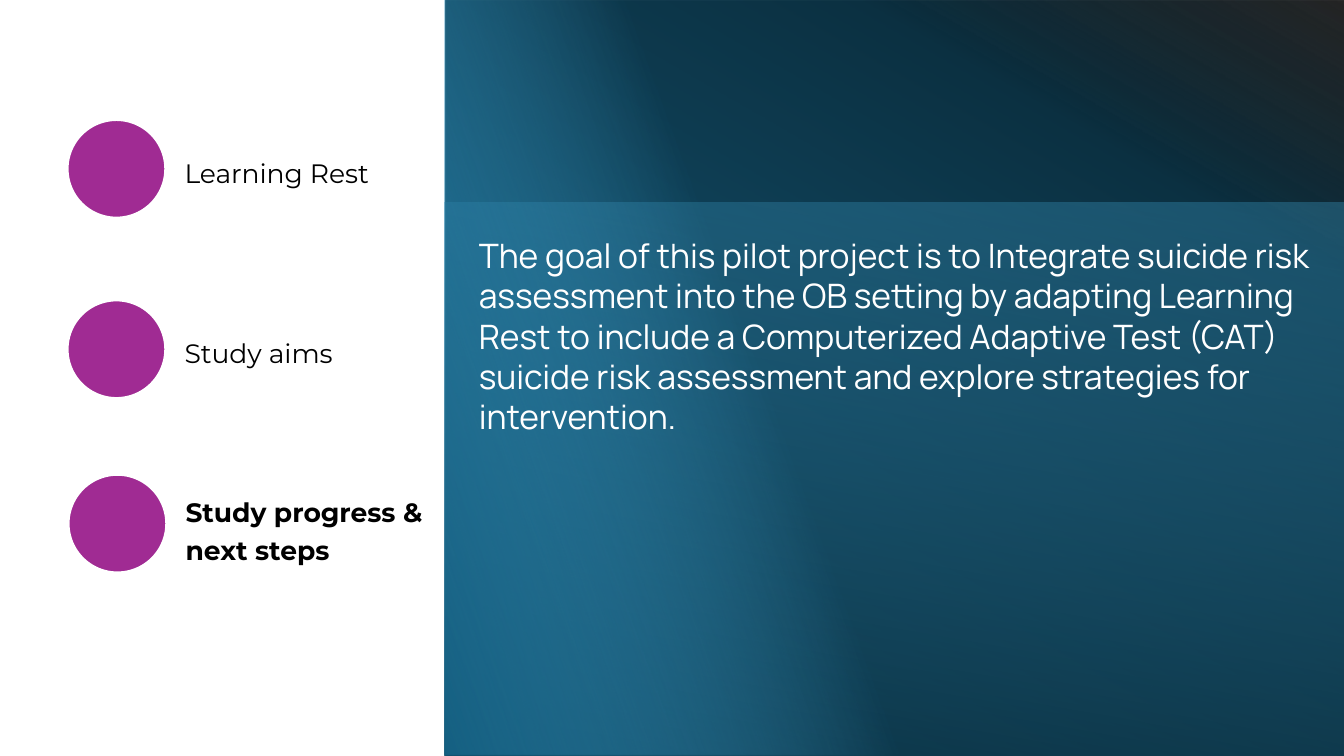
from dataclasses import dataclass

from pptx import Presentation
from pptx.dml.color import RGBColor
from pptx.enum.shapes import MSO_SHAPE as Shape
from pptx.enum.text import MSO_ANCHOR as Anchor, MSO_AUTO_SIZE as AutoSize, PP_ALIGN as Align
from pptx.oxml import parse_xml
from pptx.oxml.ns import nsdecls
from pptx.util import Inches, Pt


@dataclass(frozen=True)
class Theme:
    white: str = "FFFFFF"
    black: str = "000000"
    purple: str = "A02B93"
    teal: str = "156082"
    navy: str = "0B3041"
    sky: str = "46B1E1"
    agenda_font: str = "Montserrat"
    body_font: str = "Manrope"
    agenda_size: float = 19
    body_size: float = 24
    outline: float = 1.5


def write_text(shape, lines, *, font, size, color, bold=False, anchor=Anchor.TOP,
               side_inset=0.1, end_inset=0.05, line_spacing=None, space_after=None):
    frame = shape.text_frame
    frame.auto_size = AutoSize.NONE
    frame.word_wrap = True
    frame.vertical_anchor = anchor
    frame.margin_left = frame.margin_right = Inches(side_inset)
    frame.margin_top = frame.margin_bottom = Inches(end_inset)
    for index, line in enumerate(lines):
        paragraph = frame.paragraphs[0] if index == 0 else frame.add_paragraph()
        paragraph.alignment = Align.LEFT
        if line_spacing is not None:
            paragraph.line_spacing = line_spacing
        if space_after is not None:
            paragraph.space_after = Pt(space_after)
        run = paragraph.add_run()
        run.text = line
        run.font.name = font
        run.font.size = Pt(size)
        run.font.bold = bold
        run.font.color.rgb = RGBColor.from_string(color)


class SlideBuilder:
    def __init__(self, slide, theme):
        self.slide = slide
        self.theme = theme

    def add_plain_shape(self, kind, box):
        shape = self.slide.shapes.add_shape(kind, *map(Inches, box))
        shape.shadow.inherit = False
        return shape

    def add_gradient_panel(self, box, stops, angle, flip=False, rotation=0):
        """Add a rectangle; each stop is (position %, colour, opacity %)."""
        panel = self.add_plain_shape(Shape.RECTANGLE, box)
        panel.line.fill.background()
        panel.rotation = rotation
        properties = panel._element.spPr
        if flip:
            properties.xfrm.set("flipH", "1")
        stop_xml = "".join(
            f'<a:gs pos="{position * 1000}"><a:srgbClr val="{color}">'
            f'<a:alpha val="{opacity * 1000}"/></a:srgbClr></a:gs>'
            for position, color, opacity in stops)
        gradient = parse_xml(
            f'<a:gradFill {nsdecls("a")} rotWithShape="1"><a:gsLst>{stop_xml}</a:gsLst>'
            f'<a:lin ang="{angle * 60000}" scaled="0"/></a:gradFill>')
        properties.prstGeom.addnext(gradient)

    def add_circle(self, left, top, diameter):
        circle = self.add_plain_shape(Shape.OVAL, (left, top, diameter, diameter))
        circle.fill.solid()
        circle.fill.fore_color.rgb = RGBColor.from_string(self.theme.purple)
        circle.line.color.rgb = RGBColor.from_string(self.theme.white)
        circle.line.width = Pt(self.theme.outline)

    def add_agenda_text(self, box, lines, is_title=False):
        box = [Inches(length) for length in box]
        if is_title:
            shape = self.slide.shapes.title
            shape.left, shape.top, shape.width, shape.height = box
            self.slide.shapes._spTree.append(shape._element)
        else:
            shape = self.slide.shapes.add_textbox(*box)
        write_text(shape, lines, font=self.theme.agenda_font, size=self.theme.agenda_size,
                   color=self.theme.black, bold=is_title, anchor=Anchor.MIDDLE,
                   side_inset=0, end_inset=0.03, line_spacing=0.9,
                   space_after=0.35 * self.theme.agenda_size)

    def add_body_text(self, box, text):
        shape = self.slide.shapes.add_textbox(*map(Inches, box))
        write_text(shape, [text], font=self.theme.body_font, size=self.theme.body_size,
                   color=self.theme.white)


def main():
    presentation = Presentation()
    presentation.slide_width = Inches(13.33)
    presentation.slide_height = Inches(7.5)
    theme = Theme()
    builder = SlideBuilder(
        presentation.slides.add_slide(presentation.slide_layouts[5]), theme)

    builder.add_gradient_panel(
        (4.42, 0, 8.92, 7.5),
        [(2, theme.teal, 100), (78, theme.navy, 100), (100, theme.black, 85)], angle=300)
    builder.add_gradient_panel(
        (4.41, 2.01, 8.92, 5.49),
        [(0, theme.sky, 30), (100, theme.black, 44)], angle=80, flip=True)
    builder.add_gradient_panel(
        (4.44, -0.04, 7.5, 7.57),
        [(56, theme.sky, 0), (100, theme.teal, 100)], angle=110, flip=True, rotation=90)

    program = "Learning Rest"
    diameter = 0.97
    agenda = [
        (0.67, 1.19, 1.83, 1.25, [program], False),
        (0.67, 2.98, 1.83, 3.04, ["Study aims"], False),
        (0.68, 4.71, 1.84, 4.8, ["Study progress &", "next steps"], True),
    ]
    for circle_left, circle_top, text_left, text_top, lines, is_title in agenda:
        builder.add_circle(circle_left, circle_top, diameter)
        builder.add_agenda_text((text_left, text_top, 5.15, diameter), lines, is_title)

    builder.add_body_text(
        (4.65, 2.28, 8.45, 2.52),
        "The goal of this pilot project is to Integrate suicide risk assessment into the "
        f"OB setting by adapting {program} to include a Computerized Adaptive Test (CAT) "
        "suicide risk assessment and explore strategies for intervention.")
    presentation.save("out.pptx")


if __name__ == "__main__":
    main()
